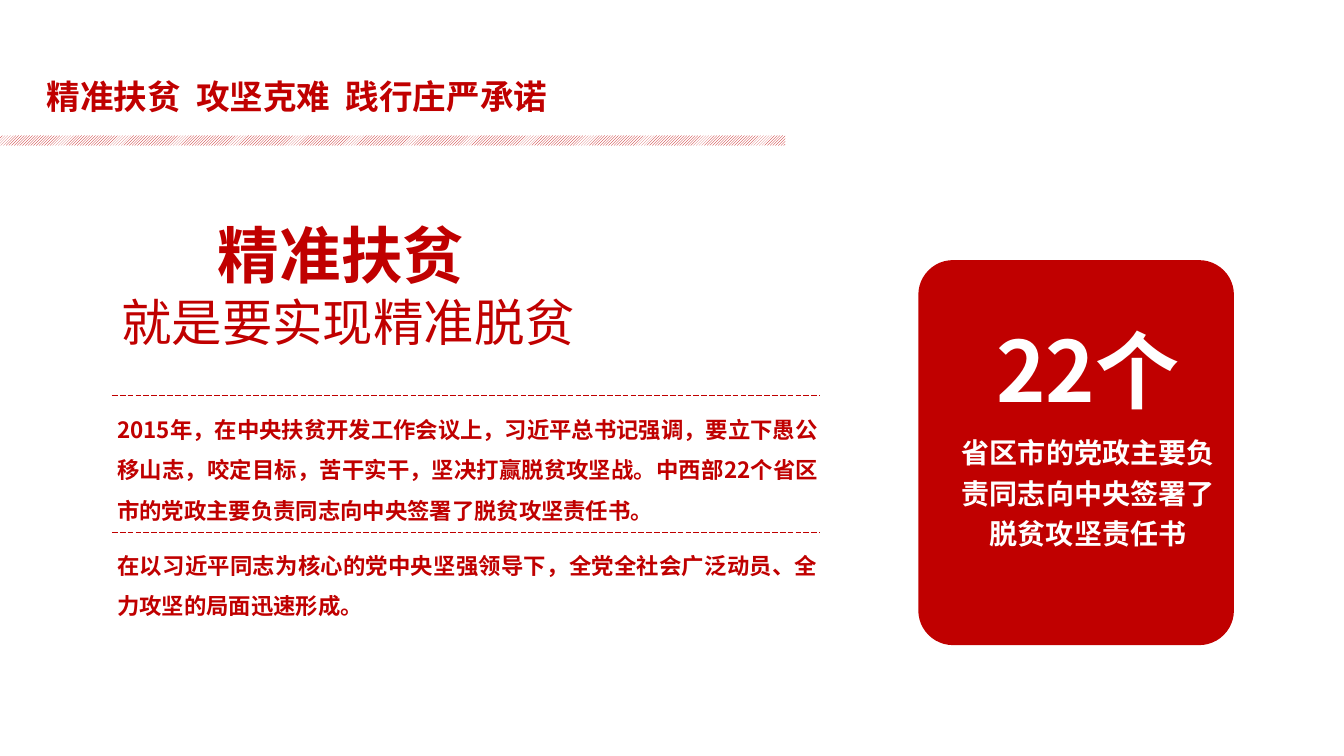
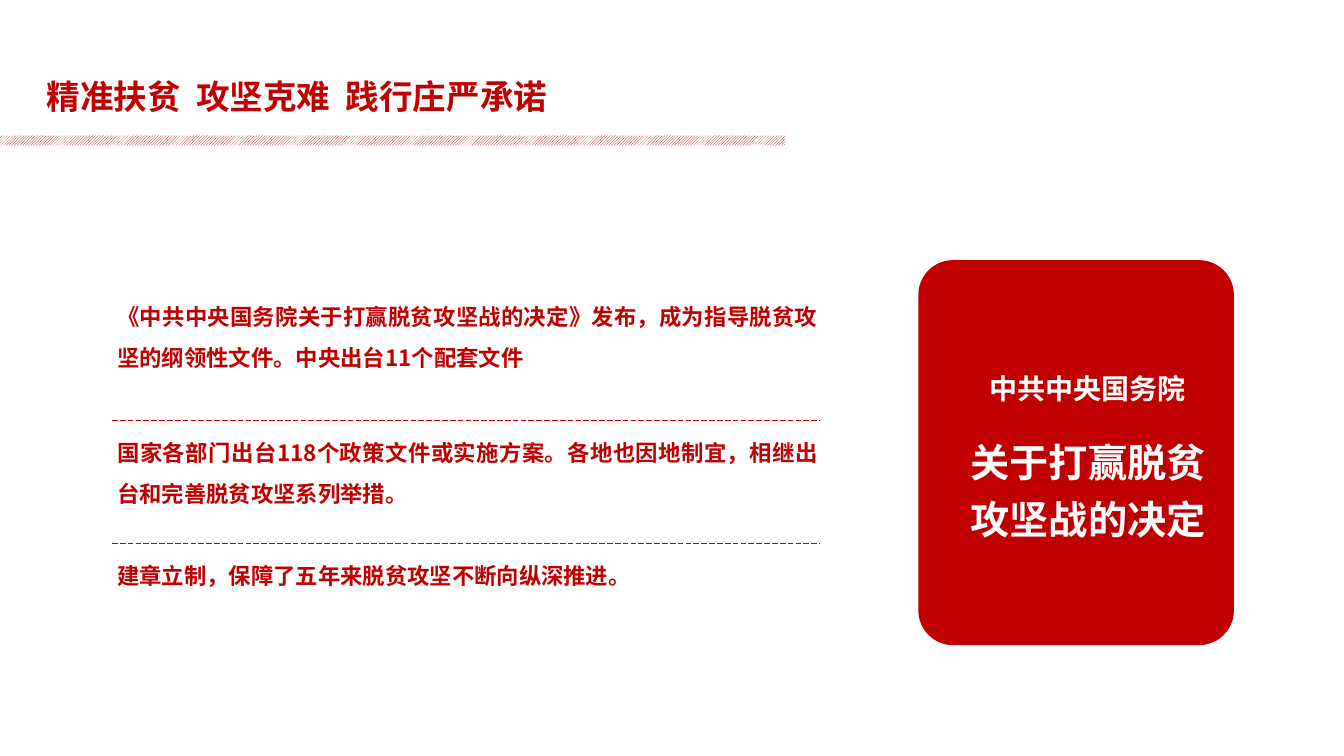
"""Build two slides on targeted poverty alleviation, each with body text and a red card."""
from lxml.etree import SubElement
from pptx import Presentation
from pptx.dml.color import RGBColor
from pptx.enum.dml import MSO_LINE, MSO_PATTERN
from pptx.enum.shapes import MSO_CONNECTOR, MSO_SHAPE
from pptx.enum.text import MSO_ANCHOR, MSO_AUTO_SIZE, PP_ALIGN
from pptx.oxml.ns import qn
from pptx.util import Pt

FONT = "Noto Sans CJK SC"
RED, WHITE = "C00000", "FFFFFF"
color = RGBColor.from_string
TITLE = ["精准扶贫", "攻坚克难", "践行庄严承诺"]
BODY_LEFT, BODY_WIDTH = 74.2, 519.8
RULE_LEFT, RULE_RIGHT = 80, 586

SLIDES = [
    {
        "headline": [("精准扶贫 ", 44, True), ("就是要实现精准脱贫", 36, False)],
        "body": [
            (283, 97, "2015年，在中央扶贫开发工作会议上，习近平总书记强调，要立下愚公移山志，咬定目标，苦干实干，坚决打赢脱贫攻坚战。中西部22个省区市的党政主要负责同志向中央签署了脱贫攻坚责任书。"),
            (380, 68, "在以习近平同志为核心的党中央坚强领导下，全党全社会广泛动员、全力攻坚的局面迅速形成。"),
        ],
        "rules": [282.6, 380.5],
        "card": [
            (690, 209.5, 174, 94, "22个", 60),
            (672.5, 303, 209.5, 94, "省区市的党政主要负责同志向中央签署了脱贫攻坚责任书", 20),
        ],
    },
    {
        "headline": [],
        "body": [
            (202.3, 68, "《中共中央国务院关于打赢脱贫攻坚战的决定》发布，成为指导脱贫攻坚的纲领性文件。中央出台11个配套文件"),
            (299.5, 68, "国家各部门出台118个政策文件或实施方案。各地也因地制宜，相继出台和完善脱贫攻坚系列举措。"),
            (387.4, 35, "建章立制，保障了五年来脱贫攻坚不断向纵深推进。"),
        ],
        "rules": [300, 388],
        "card": [
            (690, 257, 174, 34, "中共中央国务院", 20),
            (672.5, 303, 209.5, 85, "关于打赢脱贫攻坚战的决定", 28),
        ],
    },
]


def add_span(para, text, size, hue, bold=True):
    span = para.add_run()
    span.text = text
    span.font.size, span.font.bold, span.font.name = Pt(size), bold, FONT
    span.font.color.rgb = color(hue)
    properties = span.font._element
    properties.set("lang", "zh-CN")
    SubElement(properties, qn("a:ea")).set("typeface", FONT)
    return span


def add_text(shapes, place, lines, hue, align, spacing, margins):
    box = shapes.add_textbox(*[Pt(value) for value in place])
    frame = box.text_frame
    frame.word_wrap = True
    frame.vertical_anchor = MSO_ANCHOR.TOP
    frame.margin_left = frame.margin_right = Pt(margins[0])
    frame.margin_top = frame.margin_bottom = Pt(margins[1])
    for number, (text, size, bold) in enumerate(lines):
        para = frame.add_paragraph() if number else frame.paragraphs[0]
        para.alignment, para.line_spacing = align, spacing
        add_span(para, text, size, hue, bold)


deck = Presentation()
deck.slide_width, deck.slide_height = Pt(960), Pt(540)
layout = deck.slide_layouts[5]
pages = [deck.slides.add_slide(layout) for content in SLIDES]

band = pages[0].shapes.add_shape(MSO_SHAPE.RECTANGLE, Pt(-13.7), Pt(96.8), Pt(574.6), Pt(7.2))
band.shadow.inherit = False
band.line.fill.background()
band.fill.patterned()
band.fill.pattern = MSO_PATTERN.DARK_UPWARD_DIAGONAL
band.fill.fore_color.rgb, band.fill.back_color.rgb = color(RED), color(WHITE)
layout.shapes.element.append(band._element)

for page, content in zip(pages, SLIDES):
    title = page.shapes.title
    title.left, title.top, title.width, title.height = Pt(26), Pt(54), Pt(434), Pt(60.5)
    frame = title.text_frame
    frame.word_wrap, frame.auto_size = True, MSO_AUTO_SIZE.NONE
    frame.vertical_anchor = MSO_ANCHOR.TOP
    para = frame.paragraphs[0]
    para.alignment, para.line_spacing = PP_ALIGN.LEFT, 0.9
    for number, phrase in enumerate(TITLE):
        if number:
            gap = add_span(para, " ", 24, RED)
            gap.font._element.set("spc", "540")
        add_span(para, phrase, 24, RED)

    if content["headline"]:
        add_text(page.shapes, (48.2, 150.5, 401, 106.5), content["headline"],
                 RED, PP_ALIGN.CENTER, 1.0, (9.6, 4.8))
    for top, height, text in content["body"]:
        add_text(page.shapes, (BODY_LEFT, top, BODY_WIDTH, height), [(text, 16, True)],
                 RED, PP_ALIGN.JUSTIFY, 1.5, (9.6, 4.8))

    for top in content["rules"]:
        rule = page.shapes.add_connector(
            MSO_CONNECTOR.STRAIGHT, Pt(RULE_LEFT), Pt(top), Pt(RULE_RIGHT), Pt(top))
        rule.line.color.rgb = color(RED)
        rule.line.width = Pt(0.5)
        rule.line.dash_style = MSO_LINE.LONG_DASH
        SubElement(rule._element.spPr, qn("a:effectLst"))

    group = page.shapes.add_group_shape()
    card = group.shapes.add_shape(
        MSO_SHAPE.ROUNDED_RECTANGLE, Pt(656), Pt(185.8), Pt(225.4), Pt(275))
    card.adjustments[0] = 0.11
    card.shadow.inherit = False
    card.fill.solid()
    card.fill.fore_color.rgb = color(RED)
    card.line.fill.background()
    for *place, text, size in content["card"]:
        add_text(group.shapes, place, [(text, size, True)],
                 WHITE, PP_ALIGN.CENTER, 1.2, (7.2, 3.6))

deck.save("out.pptx")
